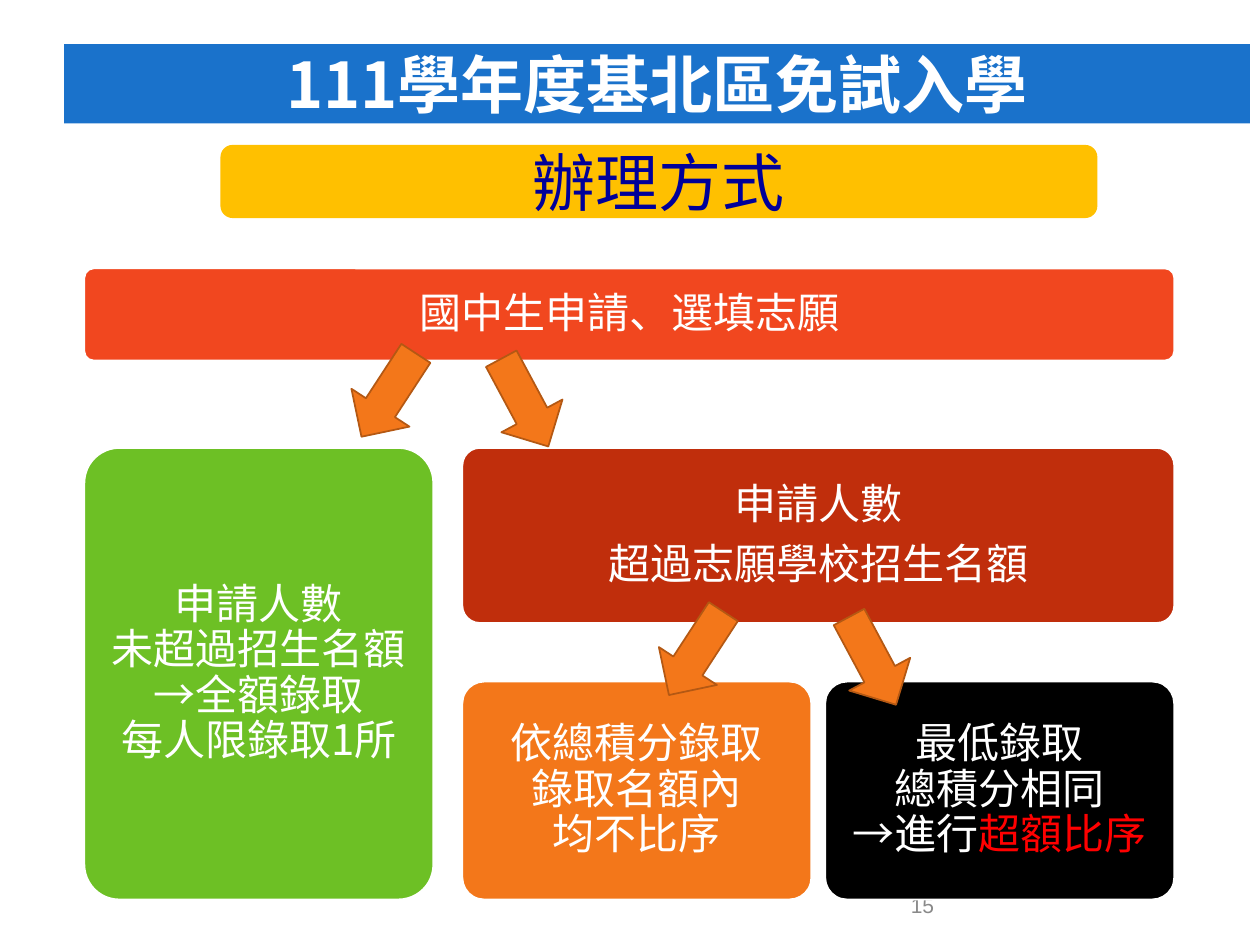
from dataclasses import dataclass
from typing import Optional

import pptx
import pptx.dml.color
import pptx.enum.shapes
import pptx.enum.text
import pptx.oxml.ns
import pptx.util
from lxml import etree

Pt = pptx.util.Pt
RGBColor = pptx.dml.color.RGBColor
Shape = pptx.enum.shapes.MSO_SHAPE
Align = pptx.enum.text.PP_ALIGN
Anchor = pptx.enum.text.MSO_ANCHOR

WHITE = RGBColor(0xFF, 0xFF, 0xFF)
BLACK = RGBColor(0x00, 0x00, 0x00)
RED = RGBColor(0xFF, 0x00, 0x00)
BLUE = RGBColor(0x1A, 0x72, 0xCB)
NAVY = RGBColor(0x00, 0x00, 0x99)
GOLD = RGBColor(0xFF, 0xC0, 0x00)
SCARLET = RGBColor(0xF1, 0x47, 0x1F)
GREEN = RGBColor(0x6D, 0xC0, 0x25)
BRICK = RGBColor(0xC0, 0x2E, 0x0C)
ORANGE = RGBColor(0xF3, 0x77, 0x1A)
BROWN = RGBColor(0xB4, 0x58, 0x13)
GREY = RGBColor(0x89, 0x89, 0x89)

CJK_FONT = "Noto Sans CJK SC"
LEFT, MIDDLE, RIGHT = 48.24, 264.24, 471.6
CARD_WIDTH, RIGHT_EDGE = 199.4, 671
CARD_TOP, LOWER_TOP, BOTTOM = 256, 389.5, 514
ARROW_WIDTH, ARROW_HEIGHT = 39.6, 56.9
ARROW_DROP = 4.3


@dataclass(frozen=True)
class Span:
    text: str
    color: RGBColor = WHITE


@dataclass(frozen=True)
class Panel:
    left: float
    top: float
    width: float
    height: float
    fill: RGBColor
    paragraphs: tuple[tuple[Span, ...], ...]
    kind: Shape = Shape.ROUNDED_RECTANGLE
    corner: Optional[float] = 0.1
    line: Optional[RGBColor] = WHITE
    size: float = 24
    bold: bool = False
    line_spacing: float = 0.9


@dataclass(frozen=True)
class ArrowPair:
    left: float
    top: float
    spread: float


PANELS = (
    Panel(36.72, 25.2, 677.5, 45.4, BLUE, ((Span("111學年度基北區免試入學"),),),
          kind=Shape.RECTANGLE, corner=None, line=None, size=36, bold=True, line_spacing=1.0),
    Panel(126, 82.8, 501.1, 41.8, GOLD, ((Span("辦理方式", NAVY),),),
          corner=None, line=None, size=36, line_spacing=1.0),
    Panel(LEFT, 153.4, RIGHT_EDGE - LEFT, 52.6, SCARLET, ((Span("國中生申請、選填志願"),),)),
    Panel(LEFT, CARD_TOP, CARD_WIDTH, BOTTOM - CARD_TOP, GREEN,
          ((Span("申請人數\n未超過招生名額\n→全額錄取\n每人限錄取1所"),),)),
    Panel(MIDDLE, CARD_TOP, RIGHT_EDGE - MIDDLE, 100, BRICK,
          ((Span("申請人數"),), (Span("超過志願學校招生名額"),))),
    Panel(MIDDLE, LOWER_TOP, CARD_WIDTH, BOTTOM - LOWER_TOP, ORANGE,
          ((Span("依總積分錄取\n錄取名額內\n均不比序"),),)),
    Panel(RIGHT, LOWER_TOP, CARD_WIDTH, BOTTOM - LOWER_TOP, BLACK,
          ((Span("最低錄取\n總積分相同\n→進行"), Span("超額比序", RED)),)),
)
ARROW_PAIRS = (ArrowPair(202.3, 197.3, 77.8), ArrowPair(378, 344.9, 100.8))


def apply(target, values: dict) -> None:
    for name, value in values.items():
        setattr(target, name, value)


def add_span(paragraph, text: str, color: RGBColor, size: float, bold: bool, name: str) -> None:
    for index, row in enumerate(text.split("\n")):
        if index:
            paragraph.add_line_break()
        run = paragraph.add_run()
        run.text = row
        apply(run.font, {"name": name, "size": Pt(size), "bold": bold})
        run.font.color.rgb = color
        east_asian = etree.SubElement(run.font._element, pptx.oxml.ns.qn("a:ea"))
        east_asian.set("typeface", name)


def add_block(page, kind: Shape, left: float, top: float, width: float, height: float,
              fill: RGBColor, line: Optional[RGBColor]):
    block = page.shapes.add_shape(kind, Pt(left), Pt(top), Pt(width), Pt(height))
    block.shadow.inherit = False
    block.fill.solid()
    block.fill.fore_color.rgb = fill
    if line is None:
        block.line.fill.background()
    else:
        block.line.color.rgb = line
        block.line.width = Pt(1)
    return block


def add_panel(page, panel: Panel) -> None:
    box = add_block(page, panel.kind, panel.left, panel.top, panel.width, panel.height,
                    panel.fill, panel.line)
    if panel.corner is not None:
        box.adjustments[0] = panel.corner
    frame = box.text_frame
    apply(frame, {"word_wrap": True, "vertical_anchor": Anchor.MIDDLE,
                  "margin_top": Pt(3.6), "margin_bottom": Pt(3.6)})
    for index, spans in enumerate(panel.paragraphs):
        paragraph = frame.add_paragraph() if index else frame.paragraphs[0]
        last = index == len(panel.paragraphs) - 1
        apply(paragraph, {"alignment": Align.CENTER, "line_spacing": panel.line_spacing,
                          "space_after": Pt(0 if last else 8.4)})
        for span in spans:
            add_span(paragraph, span.text, span.color, panel.size, panel.bold, CJK_FONT)


def add_arrow_pair(page, pair: ArrowPair) -> None:
    for left, top, rotation in (
        (pair.left, pair.top, 33.1),
        (pair.left + pair.spread, pair.top + ARROW_DROP, 331.8),
    ):
        arrow = add_block(page, Shape.DOWN_ARROW, left, top, ARROW_WIDTH, ARROW_HEIGHT,
                          ORANGE, BROWN)
        arrow.rotation = rotation


def add_page_number(page, number: str) -> None:
    box = page.shapes.add_textbox(Pt(513.4), Pt(502.6), Pt(167.8), Pt(28.8))
    apply(box.text_frame, {"word_wrap": True, "vertical_anchor": Anchor.MIDDLE})
    add_span(box.text_frame.paragraphs[0], number, GREY, 12, False, "Arial")


def main() -> None:
    deck = pptx.Presentation()
    apply(deck, {"slide_width": Pt(720), "slide_height": Pt(540)})
    page = deck.slides.add_slide(deck.slide_layouts[6])
    add_page_number(page, "15")
    for panel in PANELS:
        add_panel(page, panel)
    for pair in ARROW_PAIRS:
        add_arrow_pair(page, pair)
    deck.save("out.pptx")


if __name__ == "__main__":
    main()
